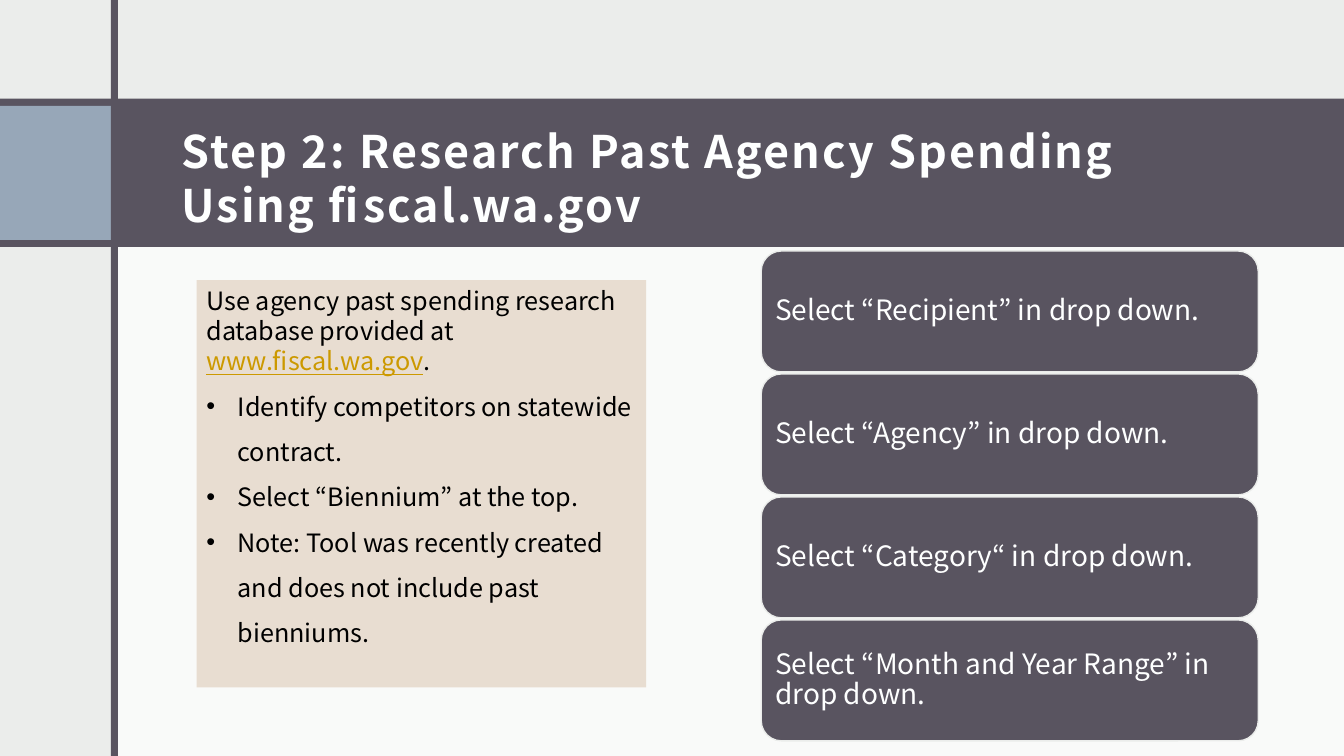
from dataclasses import dataclass
from typing import Optional

from lxml.etree import SubElement
from pptx import Presentation
from pptx.dml.color import RGBColor
from pptx.enum.shapes import MSO_SHAPE
from pptx.enum.text import MSO_ANCHOR, PP_ALIGN
from pptx.oxml.ns import qn
from pptx.util import Emu, Pt

EMU_PER_PX = 9144  # 100 px to the inch


@dataclass(frozen=True)
class Theme:
    font: str = "Noto Sans CJK JP"
    back: str = "EBEDEB"
    dark: str = "595460"
    blue: str = "97A7B8"
    sand: str = "E8DDD1"
    white: str = "FEFFFF"
    black: str = "000000"
    link: str = "CC9900"
    title_size: int = 32
    body_size: int = 18
    step_size: int = 20


@dataclass(frozen=True)
class Box:
    x: int
    y: int
    w: int
    h: int


@dataclass(frozen=True)
class Block:
    box: Box
    color: str
    opacity: Optional[int] = None


THEME = Theme()
SLIDE_W, SLIDE_H = 1333, 750

BLOCKS = [
    Block(Box(114, 233, 1219, 517), THEME.white, 75),
    Block(Box(0, 98, SLIDE_W, 147), THEME.dark),
    Block(Box(0, 105, 110, 133), THEME.blue),
    Block(Box(110, 0, 7, SLIDE_H), THEME.dark),
]
TITLE = "Step 2: Research Past Agency Spending\vUsing fiscal.wa.gov"
INTRO = [
    ("Use agency past spending research database provided at ", THEME.black),
    ("www.fiscal.wa.gov", THEME.link),
    (".", THEME.black),
]
BULLETS = [
    "Identify competitors on statewide contract.",
    "Select “Biennium” at the top.",
    "Note: Tool was recently created and does not include past bienniums.",
]
STEPS = [
    "Select “Recipient” in drop down.",
    "Select “Agency” in drop down.",
    "Select “Category“ in drop down.",
    "Select “Month and Year Range” in drop down.",
]
FIRST_STEP = Box(755, 249, 493, 120)
STEP_PITCH = 122


def px(n: int) -> Emu:
    return Emu(n * EMU_PER_PX)


def place(box: Box) -> tuple[Emu, Emu, Emu, Emu]:
    return px(box.x), px(box.y), px(box.w), px(box.h)


def add_block(slide, block: Block, kind=MSO_SHAPE.RECTANGLE):
    sp = slide.shapes.add_shape(kind, *place(block.box))
    sp.shadow.inherit = False
    sp.fill.solid()
    sp.fill.fore_color.rgb = RGBColor.from_string(block.color)
    sp.line.fill.background()
    if block.opacity is not None:
        clr = sp.fill._xPr.find(f"{qn('a:solidFill')}/{qn('a:srgbClr')}")
        SubElement(clr, qn("a:alpha")).set("val", str(block.opacity * 1000))
    return sp


def set_frame(tf, anchor, left: int, top: int, right: int, bottom: int) -> None:
    tf.word_wrap = True
    tf.vertical_anchor = anchor
    tf.margin_left, tf.margin_top = px(left), px(top)
    tf.margin_right, tf.margin_bottom = px(right), px(bottom)


def style_run(r, size: int, color: str) -> None:
    r.font.name = THEME.font
    r.font.size = Pt(size)
    r.font.color.rgb = RGBColor.from_string(color)


def add_bullet(p, indent: int) -> None:
    pPr = p._p.get_or_add_pPr()
    pPr.set("marL", str(px(indent)))
    pPr.set("indent", str(-px(indent)))
    SubElement(pPr, qn("a:buFont")).set("typeface", "Arial")
    SubElement(pPr, qn("a:buChar")).set("char", "•")


def add_title(slide) -> None:
    tf = slide.shapes.add_textbox(*place(Box(168, 105, 1095, 133))).text_frame
    set_frame(tf, MSO_ANCHOR.MIDDLE, 12, 20, 12, 10)
    tf.text = TITLE
    for r in tf.paragraphs[0].runs:
        style_run(r, THEME.title_size, THEME.white)
        r.font.bold = True
        r.font._rPr.set("spc", "150")


def add_notes_panel(slide) -> None:
    tf = add_block(slide, Block(Box(195, 278, 446, 404), THEME.sand)).text_frame
    set_frame(tf, MSO_ANCHOR.TOP, 10, 5, 10, 5)
    p = tf.paragraphs[0]
    p.alignment = PP_ALIGN.LEFT
    for text, color in INTRO:
        r = p.add_run()
        r.text = text
        style_run(r, THEME.body_size, color)
        r.font.underline = color == THEME.link
    for text in BULLETS:
        p = tf.add_paragraph()
        p.text = text
        p.alignment = PP_ALIGN.LEFT
        p.line_spacing = 1.5
        add_bullet(p, 31)
        style_run(p.runs[0], THEME.body_size, THEME.black)


def add_step(slide, index: int, text: str) -> None:
    first = FIRST_STEP
    box = Box(first.x, first.y + index * STEP_PITCH, first.w, first.h)
    sp = add_block(slide, Block(box, THEME.dark), MSO_SHAPE.ROUNDED_RECTANGLE)
    sp.line.color.rgb = RGBColor.from_string(THEME.back)
    sp.line.width = Pt(1)
    tf = sp.text_frame
    set_frame(tf, MSO_ANCHOR.MIDDLE, 8, 8, 8, 8)
    tf.text = text
    p = tf.paragraphs[0]
    p.alignment = PP_ALIGN.LEFT
    p.line_spacing = 0.9
    style_run(p.runs[0], THEME.step_size, THEME.white)


def main() -> None:
    prs = Presentation()
    prs.slide_width, prs.slide_height = px(SLIDE_W), px(SLIDE_H)
    slide = prs.slides.add_slide(prs.slide_layouts[6])

    # Background and frame
    slide.background.fill.solid()
    slide.background.fill.fore_color.rgb = RGBColor.from_string(THEME.back)
    for block in BLOCKS:
        add_block(slide, block)

    # Title and notes
    add_title(slide)
    add_notes_panel(slide)

    # Drop-down steps
    for i, text in enumerate(STEPS):
        add_step(slide, i, text)

    prs.save("out.pptx")


if __name__ == "__main__":
    main()
